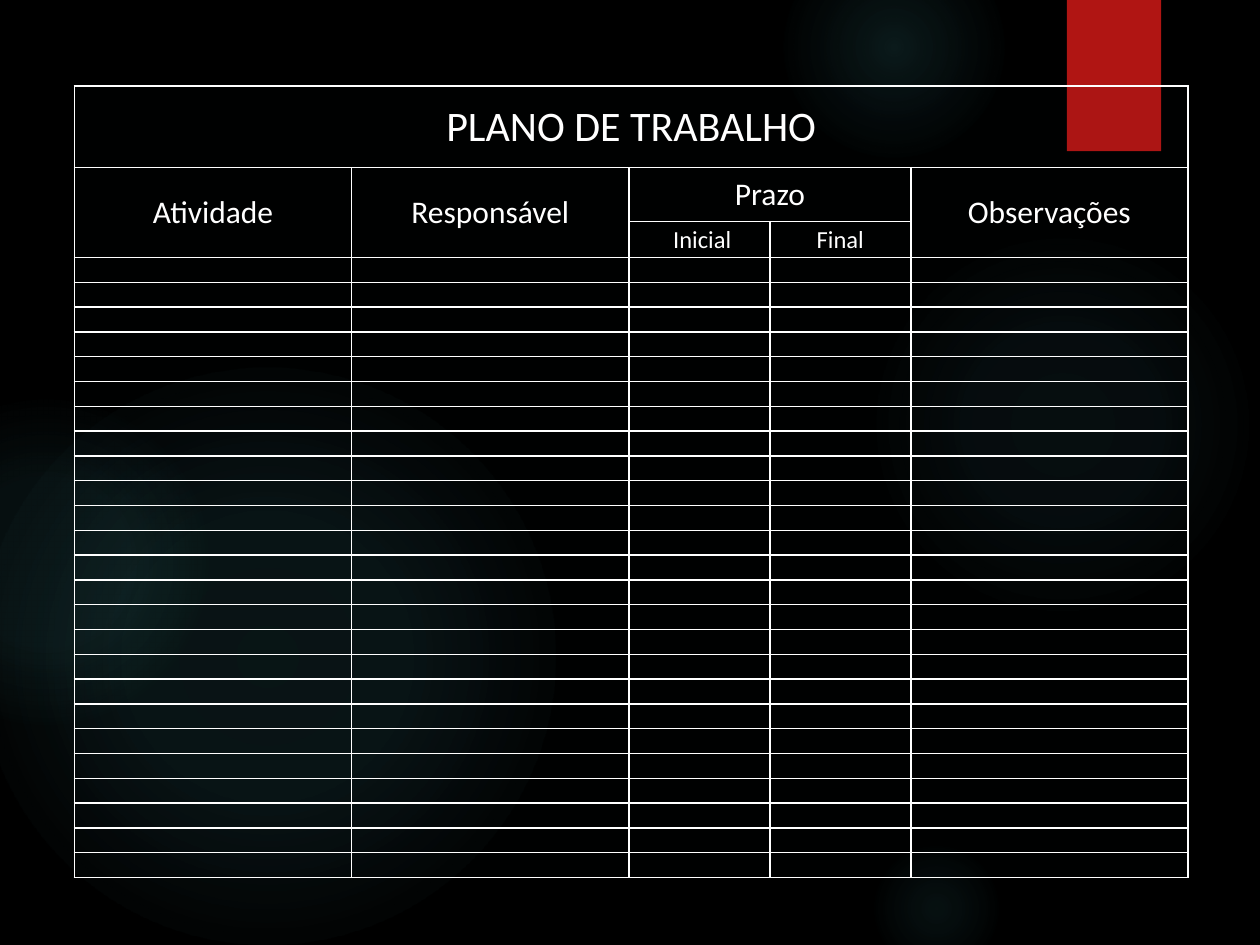
from lxml.etree import SubElement
from pptx import Presentation
from pptx.dml.color import RGBColor
from pptx.enum.shapes import MSO_SHAPE as SHAPE
from pptx.enum.text import MSO_ANCHOR as ANCHOR, PP_ALIGN as ALIGN
from pptx.oxml import parse_xml
from pptx.oxml.ns import nsdecls, qn
from pptx.util import Cm, Pt

COLORS = {
    "background": "000000",
    "glow": "50B9C1",
    "ribbon": "B01513",
    "cell": "0F3947",
    "line": "FFFFFF",
    "text": "FFFFFF",
}
FONT = "Calibri"

# left, top, diameter in cm; (position, opacity) stops in percent
GLOWS = [
    (17.5, 4.65, 7.82, [(0, 7), (36, 6), (69, 0)]),
    (15.8, -1.27, 4.45, [(0, 14), (36, 7), (73, 0)]),
    (17.5, 16.94, 2.74, [(0, 9), (36, 5), (66, 0)]),
    (-0.43, 7.42, 11.63, [(0, 11), (36, 10), (75, 0)]),
    (-2.34, 8.05, 6.55, [(0, 8), (36, 8), (72, 0)]),
]

COLUMNS = [5.59, 5.59, 2.84, 2.84, 5.59]
HEADER_ROWS = [1.65, 1.09, 0.72]
BLANK_ROWS, BLANK_HEIGHT = 25, 0.5

# row, column, last row, last column, text, size
HEADINGS = [
    (0, 0, 0, 4, "PLANO DE TRABALHO", 24),
    (1, 0, 2, 0, "Atividade", 18),
    (1, 1, 2, 1, "Responsável", 18),
    (1, 2, 1, 3, "Prazo", 18),
    (1, 4, 2, 4, "Observações", 18),
    (2, 2, 2, 2, " Inicial", 14),
    (2, 3, 2, 3, "Final", 14),
]


def rgb(name):
    return RGBColor.from_string(COLORS[name])


def add_plain_shape(s, kind, left, top, width, height):
    sp = s.shapes.add_shape(kind, Cm(left), Cm(top), Cm(width), Cm(height))
    sp.shadow.inherit = False
    sp.line.fill.background()
    return sp


def add_glow(s, left, top, diameter, stops):
    """Add a circle that fades out from its centre."""
    sp = add_plain_shape(s, SHAPE.OVAL, left, top, diameter, diameter)
    sp.fill.background()
    gs = "".join(
        f'<a:gs pos="{pos * 1000}"><a:srgbClr val="{COLORS["glow"]}">'
        f'<a:alpha val="{alpha * 1000}"/></a:srgbClr></a:gs>'
        for pos, alpha in stops
    )
    grad = parse_xml(
        f'<a:gradFill {nsdecls("a")} rotWithShape="1"><a:gsLst>{gs}</a:gsLst>'
        '<a:path path="circle"><a:fillToRect l="50000" t="50000" r="50000" b="50000"/>'
        "</a:path></a:gradFill>"
    )
    spPr = sp.element.spPr
    spPr.replace(spPr.find(qn("a:noFill")), grad)


def add_ribbon(s):
    sp = add_plain_shape(s, SHAPE.RECTANGLE, 21.51, 0, 1.9, 3.05)
    sp.fill.solid()
    sp.fill.fore_color.rgb = rgb("ribbon")


def add_solid_fill(parent, name, alpha=100):
    fill = SubElement(parent, qn("a:solidFill"))
    color = SubElement(fill, qn("a:srgbClr"), val=COLORS[name])
    if alpha < 100:
        SubElement(color, qn("a:alpha"), val=str(alpha * 1000))


def style_cell(cell):
    """Give a cell thin borders, a faint fill, no margins and a small empty line."""
    cell.margin_left = cell.margin_right = cell.margin_top = cell.margin_bottom = 0
    cell.vertical_anchor = ANCHOR.MIDDLE
    tcPr = cell._tc.get_or_add_tcPr()
    for side in ("lnL", "lnR", "lnT", "lnB"):
        add_solid_fill(SubElement(tcPr, qn(f"a:{side}"), w=str(Pt(1))), "line")
    add_solid_fill(tcPr, "cell", alpha=2)
    SubElement(cell.text_frame.paragraphs[0]._p, qn("a:endParaRPr"), sz="800")


def write_heading(cell, text, size):
    p = cell.text_frame.paragraphs[0]
    p.text = text
    p.alignment = ALIGN.CENTER
    p.font.size = Pt(size)
    p.font.name = FONT
    p.font.color.rgb = rgb("text")


def add_plan_table(s):
    rows = HEADER_ROWS + [BLANK_HEIGHT] * BLANK_ROWS
    frame = s.shapes.add_table(len(rows), len(COLUMNS), Cm(1.5), Cm(1.73),
                               Cm(sum(COLUMNS)), Cm(sum(rows)))
    table = frame.table
    table.first_row = table.horz_banding = False
    for column, width in zip(table.columns, COLUMNS):
        column.width = Cm(width)
    for row, height in zip(table.rows, rows):
        row.height = Cm(height)
    for cell in table.iter_cells():
        style_cell(cell)
    for row, col, last_row, last_col, text, size in HEADINGS:
        cell = table.cell(row, col)
        if (row, col) != (last_row, last_col):
            cell.merge(table.cell(last_row, last_col))
        write_heading(cell, text, size)


def main():
    prs = Presentation()
    prs.slide_width, prs.slide_height = Cm(25.4), Cm(19.05)
    s = prs.slides.add_slide(prs.slide_layouts[6])
    s.background.fill.solid()
    s.background.fill.fore_color.rgb = rgb("background")
    for glow in GLOWS:
        add_glow(s, *glow)
    add_ribbon(s)
    add_plan_table(s)
    prs.save("out.pptx")


if __name__ == "__main__":
    main()
